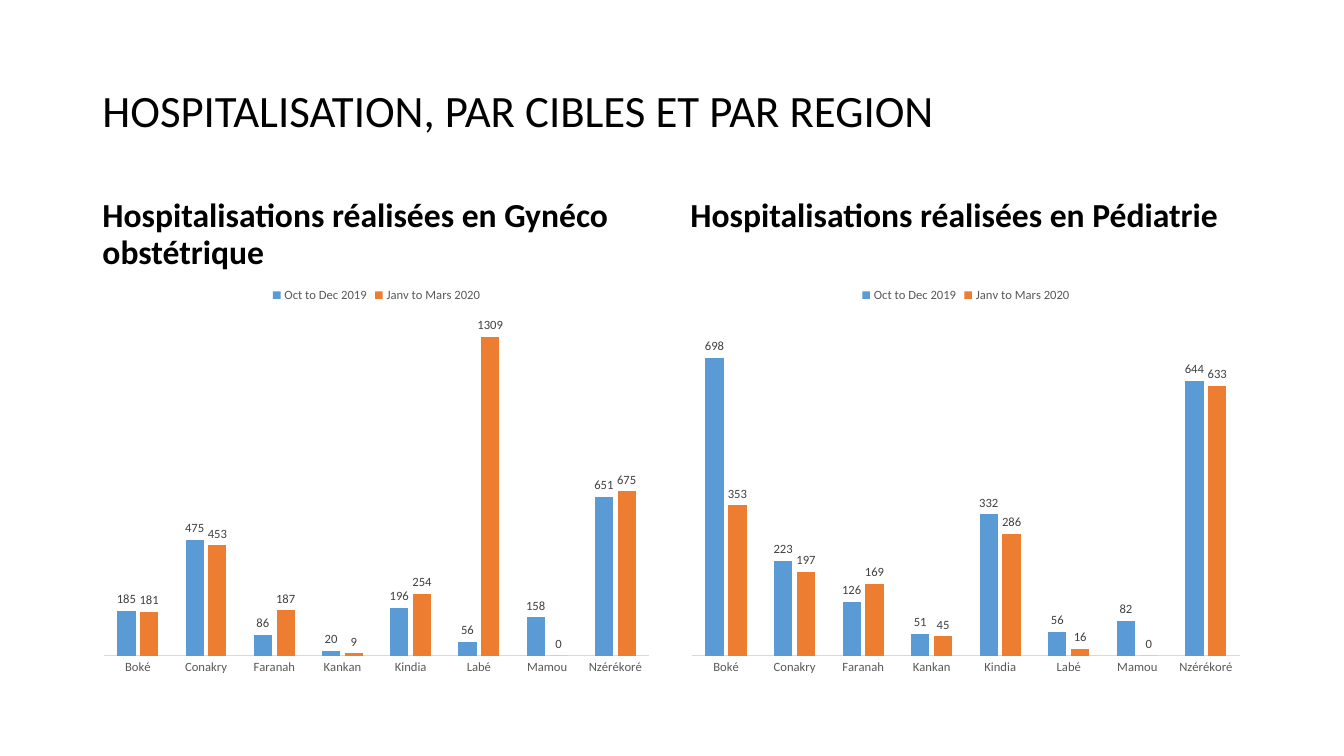
import pptx
import pptx.util
import pptx.chart.data
import pptx.dml.color
import pptx.enum.chart
import pptx.enum.text

Pt = pptx.util.Pt
FONT = "Calibri"
REGIONS = ["Boké", "Conakry", "Faranah", "Kankan",
           "Kindia", "Labé", "Mamou", "Nzérékoré"]
PERIODS = [("Oct to Dec 2019", "5B9BD5"), ("Janv to Mars 2020", "ED7D31")]
HEADING_H = 65


def color(hex_code):
    return pptx.dml.color.RGBColor.from_string(hex_code)


def set_font(font, size, hex_code, bold=False):
    font.name = FONT
    font.size = Pt(size)
    font.bold = bold
    font.color.rgb = color(hex_code)


def place_text(sp, box, text, size, anchor, bold=False, before=0, bottom=3.6):
    sp.left, sp.top, sp.width, sp.height = (Pt(v) for v in box)
    tf = sp.text_frame
    tf.word_wrap = True
    tf.auto_size = pptx.enum.text.MSO_AUTO_SIZE.NONE
    tf.vertical_anchor = anchor
    tf.margin_bottom = Pt(bottom)
    p = tf.paragraphs[0]
    p.alignment = pptx.enum.text.PP_ALIGN.LEFT
    p.line_spacing = 0.9
    p.space_before = Pt(before)
    r = p.add_run()
    r.text = text
    set_font(r.font, size, "000000", bold)


def add_title(slide, box, text):
    place_text(slide.shapes.title, box, text, 32,
               pptx.enum.text.MSO_ANCHOR.MIDDLE)


def add_column_chart(slide, box, rows, top_value):
    data = pptx.chart.data.CategoryChartData()
    data.categories = REGIONS
    for (name, _), values in zip(PERIODS, rows):
        data.add_series(name, values)
    chart = slide.shapes.add_chart(
        pptx.enum.chart.XL_CHART_TYPE.COLUMN_CLUSTERED,
        *(Pt(v) for v in box), data).chart
    set_font(chart.font, 10, "000000")
    chart.has_title = False

    # Legend
    chart.has_legend = True
    chart.legend.position = pptx.enum.chart.XL_LEGEND_POSITION.TOP
    chart.legend.include_in_layout = False
    set_font(chart.legend.font, 9, "595959")

    # Axes
    axis = chart.category_axis
    axis.major_tick_mark = pptx.enum.chart.XL_TICK_MARK.NONE
    axis.format.line.color.rgb = color("D9D9D9")
    axis.format.line.width = Pt(0.75)
    set_font(axis.tick_labels.font, 9, "595959")
    axis = chart.value_axis
    axis.visible = False
    axis.has_major_gridlines = False
    axis.minimum_scale = 0
    axis.maximum_scale = top_value

    # Columns and value labels
    plot = chart.plots[0]
    plot.gap_width = 150
    plot.overlap = -25
    plot.vary_by_categories = False
    for series, (_, hex_code) in zip(plot.series, PERIODS):
        series.format.fill.solid()
        series.format.fill.fore_color.rgb = color(hex_code)
        labels = series.data_labels
        labels.show_value = True
        labels.position = pptx.enum.chart.XL_LABEL_POSITION.OUTSIDE_END
        set_font(labels.font, 9, "404040")


def add_panel(slide, box, heading_sp, heading, bottom, rows, top_value):
    x, y, w, h = box
    place_text(heading_sp, (x, y, w, HEADING_H), heading, 24,
               pptx.enum.text.MSO_ANCHOR.BOTTOM, True, 10, bottom)
    add_column_chart(slide, (x, y + HEADING_H, w, h - HEADING_H),
                     rows, top_value)


def main():
    prs = pptx.Presentation()
    prs.slide_width, prs.slide_height = Pt(960), Pt(540)
    slide = prs.slides.add_slide(prs.slide_layouts[4])
    holders = {sp.placeholder_format.idx: sp for sp in slide.placeholders}

    # The charts take the room of the two content placeholders
    for idx in (2, 4):
        sp = holders[idx]
        sp.element.getparent().remove(sp.element)

    add_title(slide, (66, 28.8, 828, 104.4),
              "HOSPITALISATION, PAR CIBLES ET PAR REGION")
    add_panel(slide, (66, 132.5, 406, 355), holders[1],
              "Hospitalisations réalisées en Gynéco obstétrique", 3.6,
              [(185, 475, 86, 20, 196, 56, 158, 651),
               (181, 453, 187, 9, 254, 1309, 0, 675)], 1400)
    # One line of extra bottom margin aligns this heading with its neighbour
    add_panel(slide, (486, 132.5, 408, 355), holders[3],
              "Hospitalisations réalisées en Pédiatrie", 30,
              [(698, 223, 126, 51, 332, 56, 82, 644),
               (353, 197, 169, 45, 286, 16, 0, 633)], 800)

    prs.save("out.pptx")


if __name__ == "__main__":
    main()
